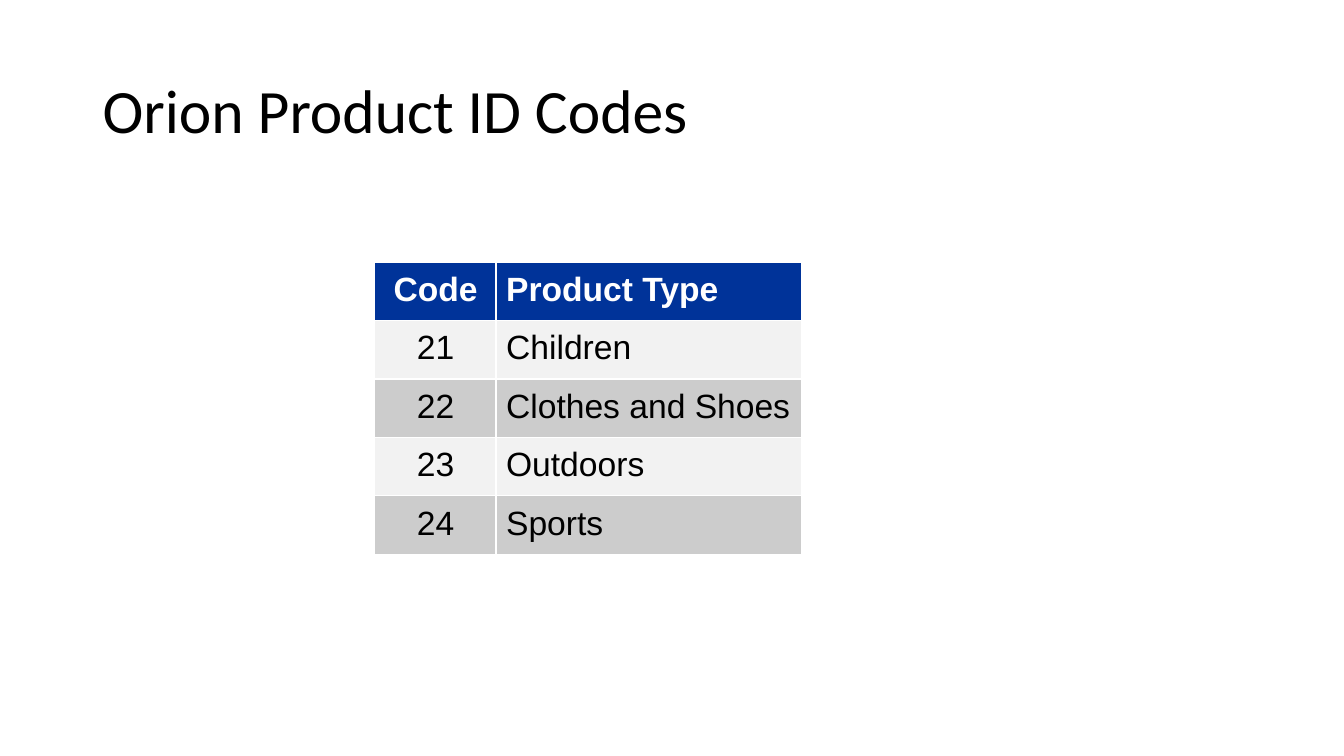
from dataclasses import dataclass

from lxml import etree
from pptx import Presentation
from pptx import util as u
from pptx.dml.color import RGBColor
from pptx.enum import text
from pptx.oxml import ns


@dataclass(frozen=True)
class Theme:
    title_font: str = "Calibri"
    table_font: str = "Arial"
    title_size: int = 44
    table_size: int = 24
    ink: str = "000000"
    white: str = "FFFFFF"
    header: str = "003399"
    bands: tuple[str, str] = ("F2F2F2", "CCCCCC")


@dataclass(frozen=True)
class Product:
    code: str
    kind: str


THEME = Theme()
HEADING = Product("Code", "Product Type")
PRODUCTS = [
    Product("21", "Children"),
    Product("22", "Clothes and Shoes"),
    Product("23", "Outdoors"),
    Product("24", "Sports"),
]
COLUMN_WIDTHS = (1.21, 3.03)
ROW_HEIGHT = 0.49


def write_text(frame, words: str, *, font: str, size: int, color: str,
               bold: bool = False, align=text.PP_ALIGN.LEFT,
               line_spacing: float = 1.0) -> None:
    paragraph = frame.paragraphs[0]
    paragraph.alignment = align
    paragraph.line_spacing = line_spacing
    run = paragraph.add_run()
    run.text = words
    run.font.name = font
    run.font.size = u.Pt(size)
    run.font.bold = bold
    run.font.color.rgb = RGBColor.from_string(color)


def set_borders(cell, color: str) -> None:
    properties = cell._tc.get_or_add_tcPr()
    for position, side in enumerate(("lnL", "lnR", "lnT", "lnB")):
        line = etree.Element(ns.qn(f"a:{side}"), w=str(u.Pt(1)))
        fill = etree.SubElement(line, ns.qn("a:solidFill"))
        etree.SubElement(fill, ns.qn("a:srgbClr"), val=color)
        properties.insert(position, line)


def draw_title(slide) -> None:
    shape = slide.shapes.add_textbox(
        u.Inches(0.92), u.Inches(0.4), u.Inches(11.5), u.Inches(1.45))
    frame = shape.text_frame
    frame.word_wrap = True
    frame.vertical_anchor = text.MSO_ANCHOR.MIDDLE
    write_text(frame, "Orion Product ID Codes", font=THEME.title_font,
               size=THEME.title_size, color=THEME.ink, line_spacing=0.9)


def draw_cell(cell, words: str, *, fill: str, color: str, bold: bool, align) -> None:
    cell.margin_left = u.Inches(0.1)
    cell.margin_right = cell.margin_top = cell.margin_bottom = u.Inches(0.09)
    cell.fill.solid()
    cell.fill.fore_color.rgb = RGBColor.from_string(fill)
    set_borders(cell, THEME.white)
    write_text(cell.text_frame, words, font=THEME.table_font,
               size=THEME.table_size, color=color, bold=bold, align=align)


def draw_products(slide) -> None:
    rows = [HEADING, *PRODUCTS]
    table = slide.shapes.add_table(
        len(rows), len(COLUMN_WIDTHS), u.Inches(3.71), u.Inches(2.6),
        u.Inches(sum(COLUMN_WIDTHS)), u.Inches(ROW_HEIGHT * len(rows))).table
    for column, width in zip(table.columns, COLUMN_WIDTHS):
        column.width = u.Inches(width)
    for index, product in enumerate(rows):
        is_header = index == 0
        fill = THEME.header if is_header else THEME.bands[(index - 1) % 2]
        color = THEME.white if is_header else THEME.ink
        draw_cell(table.cell(index, 0), product.code, fill=fill, color=color,
                  bold=is_header, align=text.PP_ALIGN.CENTER)
        draw_cell(table.cell(index, 1), product.kind, fill=fill, color=color,
                  bold=is_header, align=text.PP_ALIGN.LEFT)


def main() -> None:
    presentation = Presentation()
    presentation.slide_width = u.Inches(13.33)
    presentation.slide_height = u.Inches(7.5)
    slide = presentation.slides.add_slide(presentation.slide_layouts[6])
    draw_title(slide)
    draw_products(slide)
    presentation.save("out.pptx")


if __name__ == "__main__":
    main()
